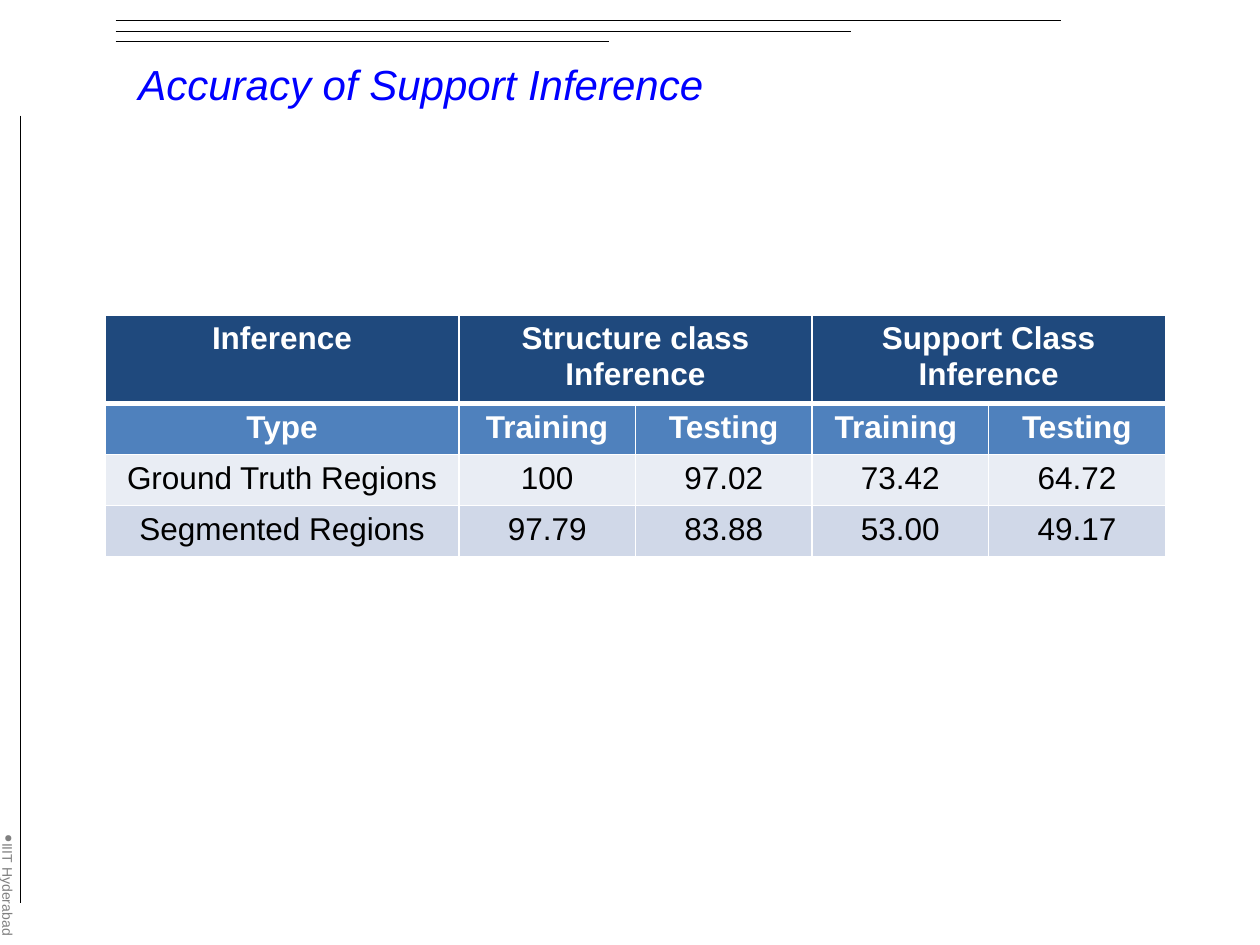
from lxml import etree
from pptx import Presentation
from pptx import util as u
from pptx.dml.color import RGBColor
from pptx.enum import shapes, text
from pptx.oxml import ns

NAVY, BLUE, WHITE, BLACK = "1F497D", "4F81BD", "FFFFFF", "000000"


def colour(code):
    return RGBColor.from_string(code)


class SlideWriter:
    font_name = "Arial"

    def __init__(self, slide):
        self.slide = slide

    def style(self, para, size, code, bold=False, italic=False):
        font = para.font
        font.name, font.size = self.font_name, u.Pt(size)
        font.bold, font.italic = bold, italic
        font.color.rgb = colour(code)

    def rule(self, x1, y1, x2, y2):
        line = self.slide.shapes.add_connector(
            shapes.MSO_CONNECTOR.STRAIGHT, u.Cm(x1), u.Cm(y1), u.Cm(x2), u.Cm(y2))
        line.line.color.rgb = colour(BLACK)
        line.line.width = u.Pt(0.75)
        etree.SubElement(line._element.spPr, ns.qn("a:effectLst"))

    def textbox(self, words, left, top, width, height):
        box = self.slide.shapes.add_textbox(
            u.Cm(left), u.Cm(top), u.Cm(width), u.Cm(height))
        frame = box.text_frame
        frame.word_wrap = True
        frame.paragraphs[0].text = words
        return frame

    def title(self, words, left, top, width, height):
        frame = self.textbox(words, left, top, width, height)
        self.style(frame.paragraphs[0], 24, "0000FF", italic=True)

    def side_label(self, words, left, top, width, height):
        frame = self.textbox(words, left, top, width, height)
        frame.margin_left = frame.margin_right = 0
        frame.margin_top = frame.margin_bottom = 0
        frame._txBody.bodyPr.set("vert", "vert")
        para = frame.paragraphs[0]
        properties = para._p.get_or_add_pPr()
        etree.SubElement(properties, ns.qn("a:buSzPct"), val="75000")
        etree.SubElement(properties, ns.qn("a:buChar"), char="●")
        self.style(para, 8, "808080")

    def borders(self, cell, top, bottom):
        properties = cell._tc.get_or_add_tcPr()
        sides = (("L", 1), ("R", 1), ("T", top), ("B", bottom))
        for place, (side, width) in enumerate(sides):
            edge = etree.Element(ns.qn(f"a:ln{side}"), w=str(u.Pt(width)))
            fill = etree.SubElement(edge, ns.qn("a:solidFill"))
            etree.SubElement(fill, ns.qn("a:srgbClr"), val=WHITE)
            properties.insert(place, edge)

    def table(self, rows, row_styles, left, top, widths, heights, header_spans):
        table = self.slide.shapes.add_table(
            len(rows), len(widths), u.Cm(left), u.Cm(top),
            u.Cm(sum(widths)), u.Cm(sum(heights))).table
        table.first_row = table.horz_banding = False
        for column, width in zip(table.columns, widths):
            column.width = u.Cm(width)
        for row, height in zip(table.rows, heights):
            row.height = u.Cm(height)
        for first, last in header_spans:
            table.cell(0, first).merge(table.cell(0, last))
        for r, (values, (fill, code, bold)) in enumerate(zip(rows, row_styles)):
            for c, value in enumerate(values):
                cell = table.cell(r, c)
                cell.fill.solid()
                cell.fill.fore_color.rgb = colour(fill)
                self.borders(cell, 3 if r == 1 else 1, 3 if r == 0 else 1)
                para = cell.text_frame.paragraphs[0]
                para.text = value
                para.alignment = text.PP_ALIGN.CENTER
                self.style(para, 18, code, bold=bold)


def main():
    deck = Presentation()
    deck.slide_width, deck.slide_height = u.Cm(25.4), u.Cm(19.05)
    writer = SlideWriter(deck.slides.add_slide(deck.slide_layouts[6]))

    for step, right in enumerate((21.38, 17.15, 12.28)):
        y = 0.42 + 0.21 * step
        writer.rule(2.33, y, right, y)
    writer.rule(0.42, 2.33, 0.42, 18.2)
    writer.side_label("IIIT Hyderabad", 0, 16.83, 0.33, 2.22)
    writer.title("Accuracy of Support Inference", 2.54, 1.05, 17.35, 1.28)

    rows = [
        ["Inference", "Structure class Inference", "", "Support Class Inference", ""],
        ["Type", "Training", "Testing", "Training ", "Testing"],
        ["Ground Truth Regions", "100", "97.02", "73.42", "64.72"],
        ["Segmented Regions", "97.79", "83.88", "53.00", "49.17"],
    ]
    row_styles = [
        (NAVY, WHITE, True),
        (BLUE, WHITE, True),
        ("E9EDF4", BLACK, False),
        ("D0D8E8", BLACK, False),
    ]
    writer.table(rows, row_styles, 2.12, 6.35, [7.13] + [3.56] * 4,
                 [1.78] + [1.03] * 3, [(1, 2), (3, 4)])
    deck.save("out.pptx")


if __name__ == "__main__":
    main()
